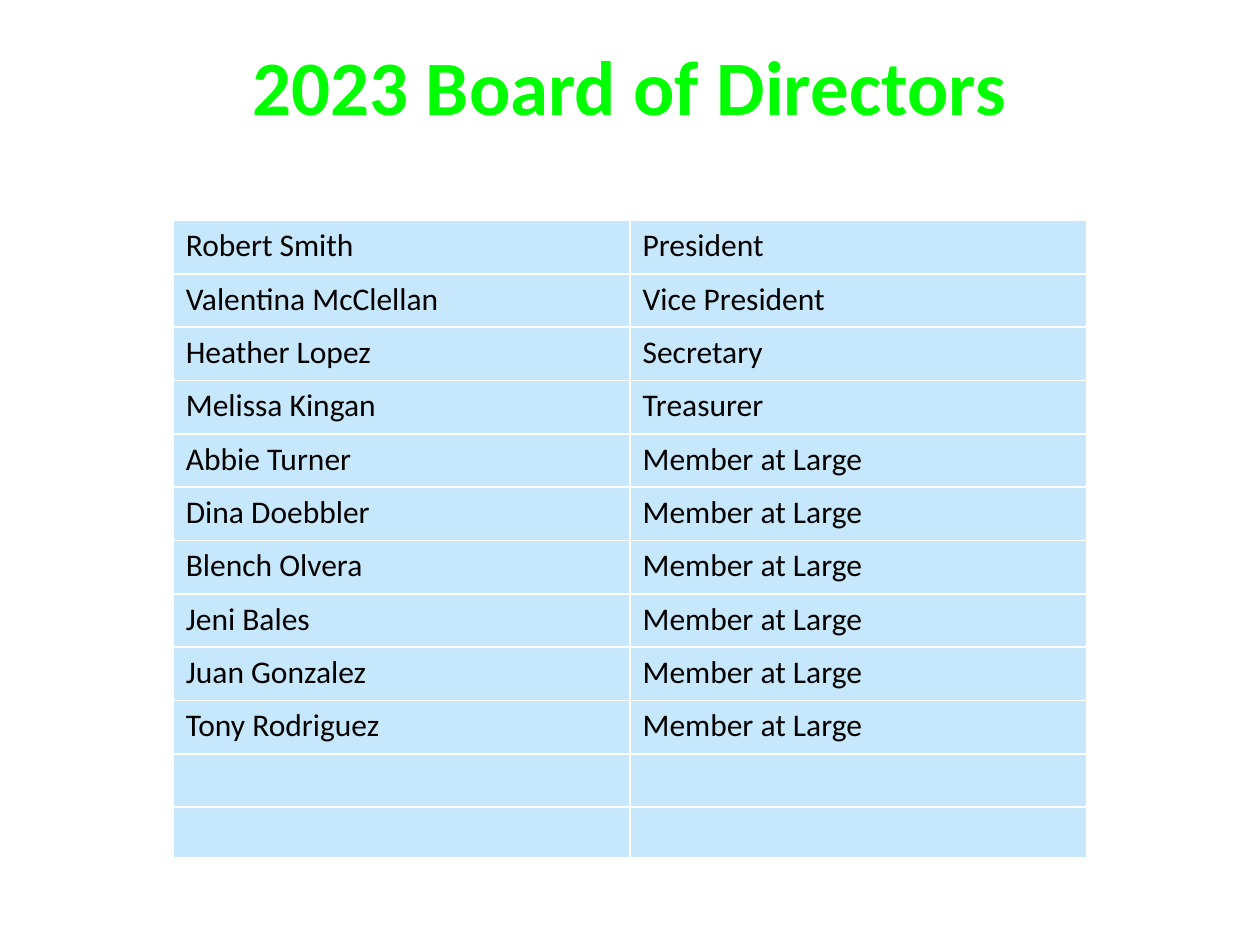
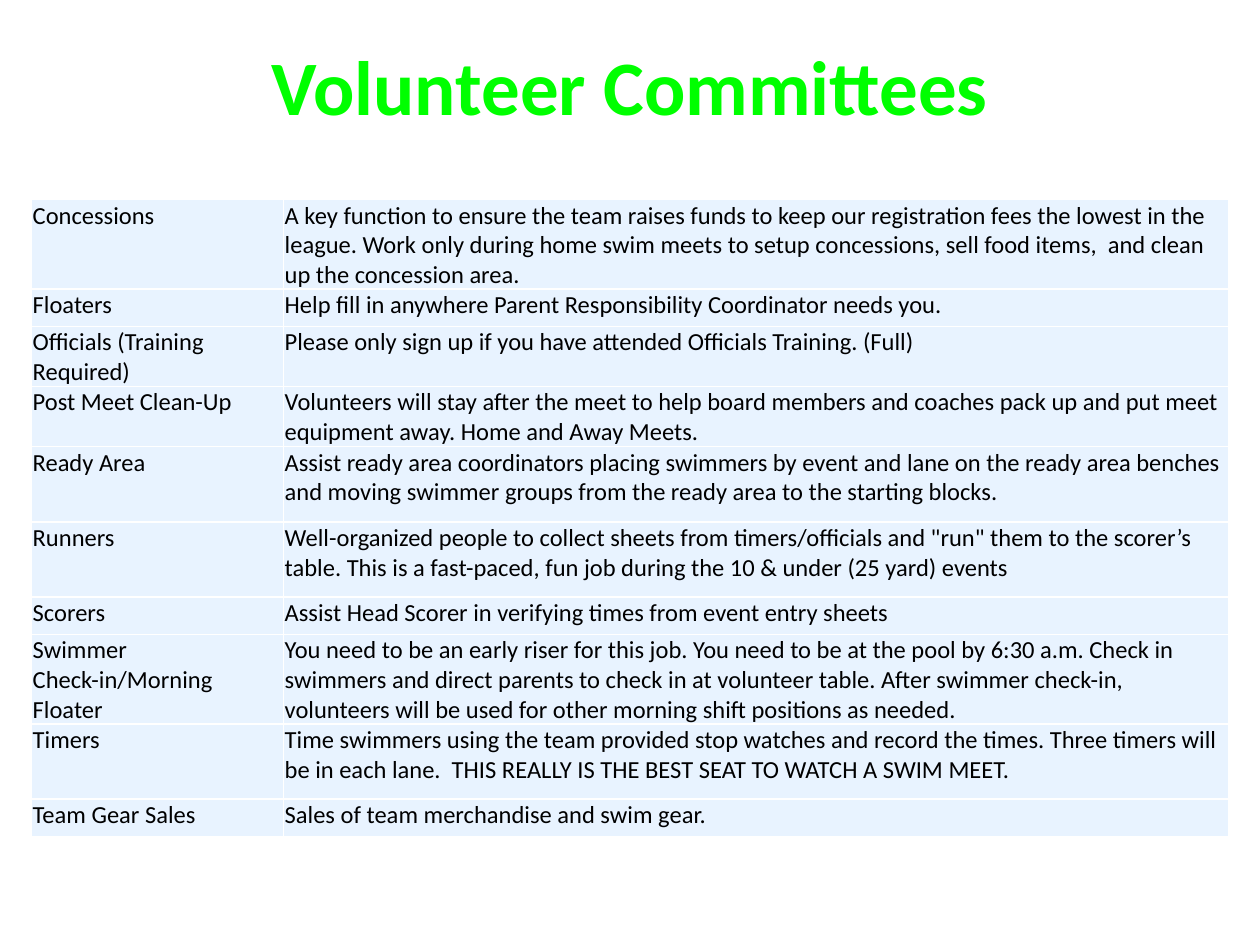
from dataclasses import dataclass

from lxml import etree
from pptx import Presentation
from pptx.dml.color import RGBColor
from pptx.enum.text import MSO_ANCHOR, PP_ALIGN
from pptx.oxml.ns import qn
from pptx.util import Pt

MIDDLE = MSO_ANCHOR.MIDDLE
CENTER = PP_ALIGN.CENTER


@dataclass(frozen=True)
class Theme:
    font: str = "Calibri"
    title_color: str = "00FF00"
    text_color: str = "000000"
    border_color: str = "FFFFFF"
    board_fill: str = "C6E7FC"
    committee_fill: str = "E8F3FF"
    title_size: float = 44
    board_size: float = 18
    committee_size: float = 14
    border_width: float = 1


theme = Theme()

board = [
    ("Robert Smith", "President"),
    ("Valentina McClellan", "Vice President"),
    ("Heather Lopez", "Secretary"),
    ("Melissa Kingan", "Treasurer"),
]
members = ["Abbie Turner", "Dina Doebbler", "Blench Olvera",
           "Jeni Bales", "Juan Gonzalez", "Tony Rodriguez"]
board += [(name, "Member at Large") for name in members]
board += [("", "")] * 2

committees = [
    ("Concessions",
     "A key function to ensure the team raises funds to keep our registration "
     "fees the lowest in the league. Work only during home swim meets to setup "
     "concessions, sell food items,  and clean up the concession area."),
    ("Floaters",
     "Help fill in anywhere Parent Responsibility Coordinator needs you."),
    ("Officials (Training Required)",
     "Please only sign up if you have attended Officials Training. (Full)"),
    ("Post Meet Clean-Up",
     "Volunteers will stay after the meet to help board members and coaches "
     "pack up and put meet equipment away. Home and Away Meets."),
    ("Ready Area",
     "Assist ready area coordinators placing swimmers by event and lane on the "
     "ready area benches and moving swimmer groups from the ready area to the "
     "starting blocks."),
    ("Runners",
     "Well-organized people to collect sheets from timers/officials and \"run\" "
     "them to the scorer’s table. This is a fast-paced, fun job during the "
     "10 & under (25 yard) events"),
    ("Scorers",
     "Assist Head Scorer in verifying times from event entry sheets"),
    ("Swimmer Check-in/Morning Floater",
     "You need to be an early riser for this job. You need to be at the pool by "
     "6:30 a.m. Check in swimmers and direct parents to check in at volunteer "
     "table. After swimmer check-in, volunteers will be used for other morning "
     "shift positions as needed."),
    ("Timers",
     "Time swimmers using the team provided stop watches and record the times. "
     "Three timers will be in each lane.  THIS REALLY IS THE BEST SEAT TO WATCH "
     "A SWIM MEET."),
    ("Team Gear Sales", "Sales of team merchandise and swim gear."),
]

TALL, SHORT = 43, 21.4
slides = [
    dict(title="2023 Board of Directors", rows=board, left=99, top=126,
         widths=[261, 261], heights=[30.5] * 11 + [18],
         fill=theme.board_fill, size=theme.board_size, margins={}),
    dict(title="Volunteer Committees", rows=committees, left=18, top=114,
         widths=[144, 540],
         heights=[TALL, SHORT, SHORT, 28, TALL, TALL, SHORT, TALL, TALL, SHORT],
         fill=theme.committee_fill, size=theme.committee_size,
         margins=dict(margin_left=Pt(0.7), margin_right=Pt(0.7),
                      margin_top=Pt(0.7), margin_bottom=Pt(0))),
]


def add_run(p, text, size, color, bold=False):
    r = p.add_run()
    r.text = text
    for name, value in dict(name=theme.font, size=Pt(size), bold=bold).items():
        setattr(r.font, name, value)
    r.font.color.rgb = RGBColor.from_string(color)


def set_borders(cell):
    """Draw all four sides; the line elements must come before the cell fill."""
    tc_pr = cell._tc.get_or_add_tcPr()
    for i, side in enumerate(("lnL", "lnR", "lnT", "lnB")):
        ln = etree.Element(qn(f"a:{side}"), w=str(Pt(theme.border_width)))
        fill = etree.SubElement(ln, qn("a:solidFill"))
        etree.SubElement(fill, qn("a:srgbClr"), val=theme.border_color)
        tc_pr.insert(i, ln)


prs = Presentation()
prs.slide_width, prs.slide_height = Pt(720), Pt(540)

for page in slides:
    s = prs.slides.add_slide(prs.slide_layouts[6])

    tf = s.shapes.add_textbox(Pt(18), Pt(3.6), Pt(684), Pt(90)).text_frame
    tf.word_wrap = True
    tf.vertical_anchor = MIDDLE
    p = tf.paragraphs[0]
    p.alignment = CENTER
    add_run(p, page["title"], theme.title_size, theme.title_color, bold=True)

    widths, heights = page["widths"], page["heights"]
    table = s.shapes.add_table(
        len(heights), len(widths), Pt(page["left"]), Pt(page["top"]),
        Pt(sum(widths)), Pt(sum(heights))).table
    table.first_row = table.horz_banding = False
    for column, width in zip(table.columns, widths):
        column.width = Pt(width)
    for row, height, texts in zip(table.rows, heights, page["rows"]):
        row.height = Pt(height)
        for cell, text in zip(row.cells, texts):
            for name, value in page["margins"].items():
                setattr(cell, name, value)
            cell.fill.solid()
            cell.fill.fore_color.rgb = RGBColor.from_string(page["fill"])
            set_borders(cell)
            if text:
                add_run(cell.text_frame.paragraphs[0], text, page["size"],
                        theme.text_color)

prs.save("out.pptx")
